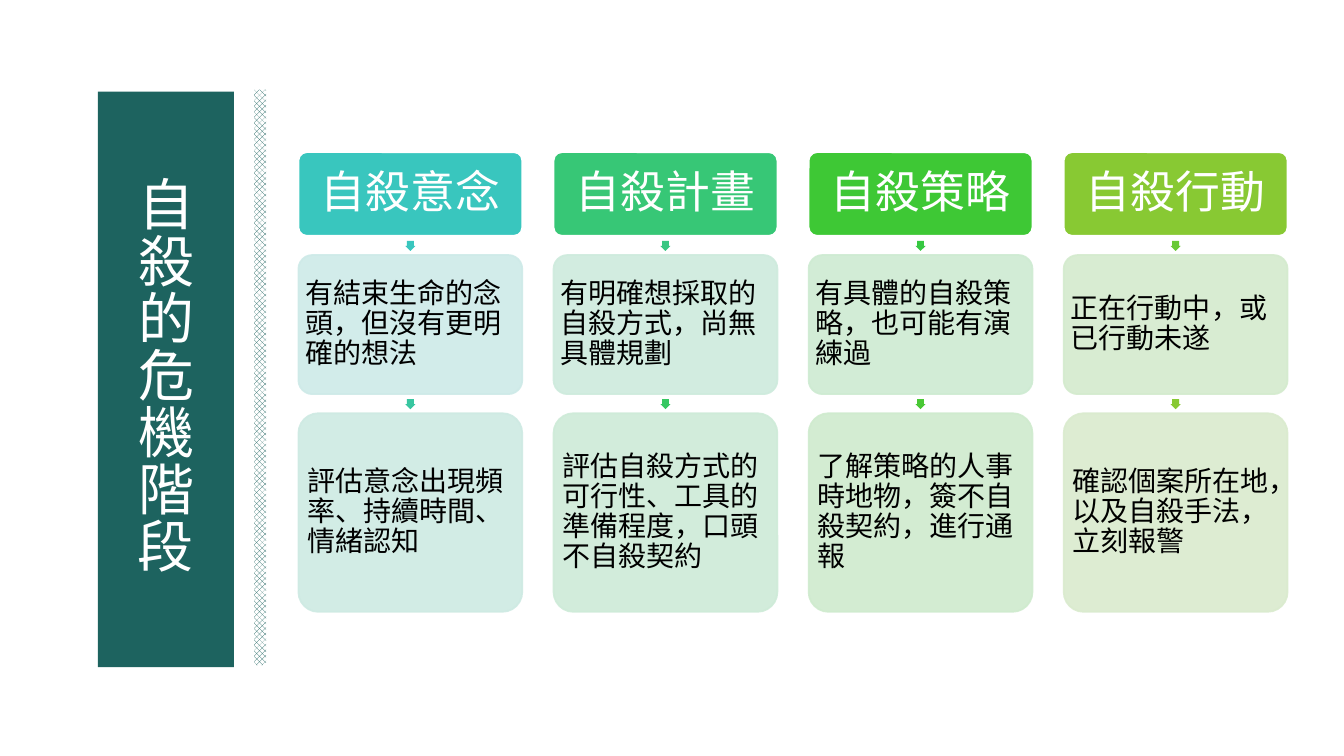
from lxml import etree
from pptx import Presentation
from pptx.dml.color import RGBColor
from pptx.enum.dml import MSO_PATTERN
from pptx.enum.shapes import MSO_SHAPE
from pptx.enum.text import MSO_ANCHOR, PP_ALIGN
from pptx.oxml.ns import qn
from pptx.util import Inches, Pt

WHITE = RGBColor(0xFF, 0xFF, 0xFF)
BLACK = RGBColor(0x00, 0x00, 0x00)
DARK_TEAL = RGBColor(0x1D, 0x63, 0x5F)

# Each stage: texts and colours of the three cards, then the two arrow colours
STAGES = [
    (["自殺意念", "有結束生命的念頭，但沒有更明確的想法", "評估意念出現頻率、持續時間、情緒認知"],
     [RGBColor(0x39, 0xC6, 0xBE), RGBColor(0xCE, 0xEA, 0xE8), RGBColor(0xCE, 0xEA, 0xE3)],
     [RGBColor(0x39, 0xC6, 0xBE), RGBColor(0x38, 0xC6, 0xA0)]),
    (["自殺計畫", "有明確想採取的自殺方式，尚無具體規劃", "評估自殺方式的可行性、工具的準備程度，口頭不自殺契約"],
     [RGBColor(0x37, 0xC7, 0x76), RGBColor(0xCE, 0xEB, 0xDD), RGBColor(0xCE, 0xEB, 0xD8)],
     [RGBColor(0x37, 0xC7, 0x81), RGBColor(0x36, 0xC7, 0x61)]),
    (["自殺策略", "有具體的自殺策略，也可能有演練過", "了解策略的人事時地物，簽不自殺契約，進行通報"],
     [RGBColor(0x3E, 0xC8, 0x35), RGBColor(0xCE, 0xEB, 0xD2), RGBColor(0xCF, 0xEB, 0xCE)],
     [RGBColor(0x36, 0xC8, 0x41), RGBColor(0x49, 0xC8, 0x35)]),
    (["自殺行動", "正在行動中，或已行動未遂", "確認個案所在地，以及自殺手法，立刻報警"],
     [RGBColor(0x88, 0xC9, 0x33), RGBColor(0xD4, 0xEB, 0xCE), RGBColor(0xDA, 0xEB, 0xCE)],
     [RGBColor(0x68, 0xC9, 0x34), RGBColor(0x88, 0xC9, 0x33)]),
]

# Column grid, in inches
FIRST_LEFT, COLUMN_PITCH, CARD_WIDTH = 2.96, 2.53, 2.22
CARD_ROWS = [(1.51, 0.83), (2.53, 1.38), (4.1, 1.97)]  # top, height
ARROW_TOPS = [2.39, 3.96]
ARROW_SIZE = 0.1


def add_block(slide, kind, left, top, width, height):
    """Add a preset shape without shadow or outline."""
    shape = slide.shapes.add_shape(
        kind, Inches(left), Inches(top), Inches(width), Inches(height))
    shape.shadow.inherit = False
    shape.line.fill.background()
    return shape


def fill_solid(shape, color):
    shape.fill.solid()
    shape.fill.fore_color.rgb = color


def write_text(shape, text, font, size, color, align, inset, line_spacing):
    """Write one vertically centred paragraph and return its run."""
    frame = shape.text_frame
    frame.text = text
    frame.word_wrap = True
    frame.vertical_anchor = MSO_ANCHOR.MIDDLE
    frame.margin_left = frame.margin_right = Inches(inset)
    frame.margin_top = frame.margin_bottom = Inches(inset)
    paragraph = frame.paragraphs[0]
    paragraph.alignment = align
    paragraph.line_spacing = line_spacing
    run = paragraph.runs[0]
    run.font.name = font
    run.font.size = Pt(size)
    run.font.color.rgb = color
    return run


def add_title(slide):
    # Patterned strip beside the title panel
    strip = add_block(slide, MSO_SHAPE.RECTANGLE, 2.52, 0.89, 0.12, 5.71)
    strip.fill.patterned()
    strip.fill.pattern = MSO_PATTERN.LARGE_CHECKER_BOARD
    strip.fill.fore_color.rgb = DARK_TEAL
    strip.fill.back_color.rgb = WHITE

    # Narrow panel that wraps after each character
    panel = add_block(slide, MSO_SHAPE.RECTANGLE, 0.97, 0.91, 1.35, 5.71)
    fill_solid(panel, DARK_TEAL)
    run = write_text(panel, "自殺的危機階段", "Calibri", 40, WHITE,
                     PP_ALIGN.CENTER, 0.25, 0.85)
    run.font._element.set("spc", "-150")


def add_card(slide, left, top, height, color, line_color):
    card = add_block(slide, MSO_SHAPE.ROUNDED_RECTANGLE, left, top, CARD_WIDTH, height)
    card.adjustments[0] = 0.1
    fill_solid(card, color)
    card.line.color.rgb = line_color
    card.line.width = Pt(1.25)
    return card


def add_header_card(slide, left, top, height, text, color):
    card = add_card(slide, left, top, height, color, WHITE)
    write_text(card, text, "Arial", 32, WHITE, PP_ALIGN.CENTER, 0.04, 0.9)


def add_detail_card(slide, left, top, height, text, color):
    card = add_card(slide, left, top, height, color, color)
    # Fill and outline are 90% opaque
    for color_element in card._element.spPr.iter(qn("a:srgbClr")):
        etree.SubElement(color_element, qn("a:alpha"), val="90000")
    write_text(card, text, "Arial", 20, BLACK, PP_ALIGN.LEFT, 0.03, 0.9)


def add_down_arrow(slide, left, top, color):
    arrow = add_block(slide, MSO_SHAPE.RIGHT_ARROW, left, top, ARROW_SIZE, ARROW_SIZE)
    arrow.rotation = 90
    arrow.adjustments[0] = 0.67
    arrow.adjustments[1] = 0.5
    fill_solid(arrow, color)


def add_stage(slide, left, texts, card_colors, arrow_colors):
    cards = zip(CARD_ROWS, texts, card_colors)
    for row, ((top, height), text, color) in enumerate(cards):
        add_kind = add_header_card if row == 0 else add_detail_card
        add_kind(slide, left, top, height, text, color)
    arrow_left = left + (CARD_WIDTH - ARROW_SIZE) / 2
    for top, color in zip(ARROW_TOPS, arrow_colors):
        add_down_arrow(slide, arrow_left, top, color)


def main():
    presentation = Presentation()
    presentation.slide_width = Inches(13.33)
    presentation.slide_height = Inches(7.5)
    slide = presentation.slides.add_slide(presentation.slide_layouts[6])

    add_title(slide)
    for column, stage in enumerate(STAGES):
        add_stage(slide, FIRST_LEFT + column * COLUMN_PITCH, *stage)

    presentation.save("out.pptx")


if __name__ == "__main__":
    main()
